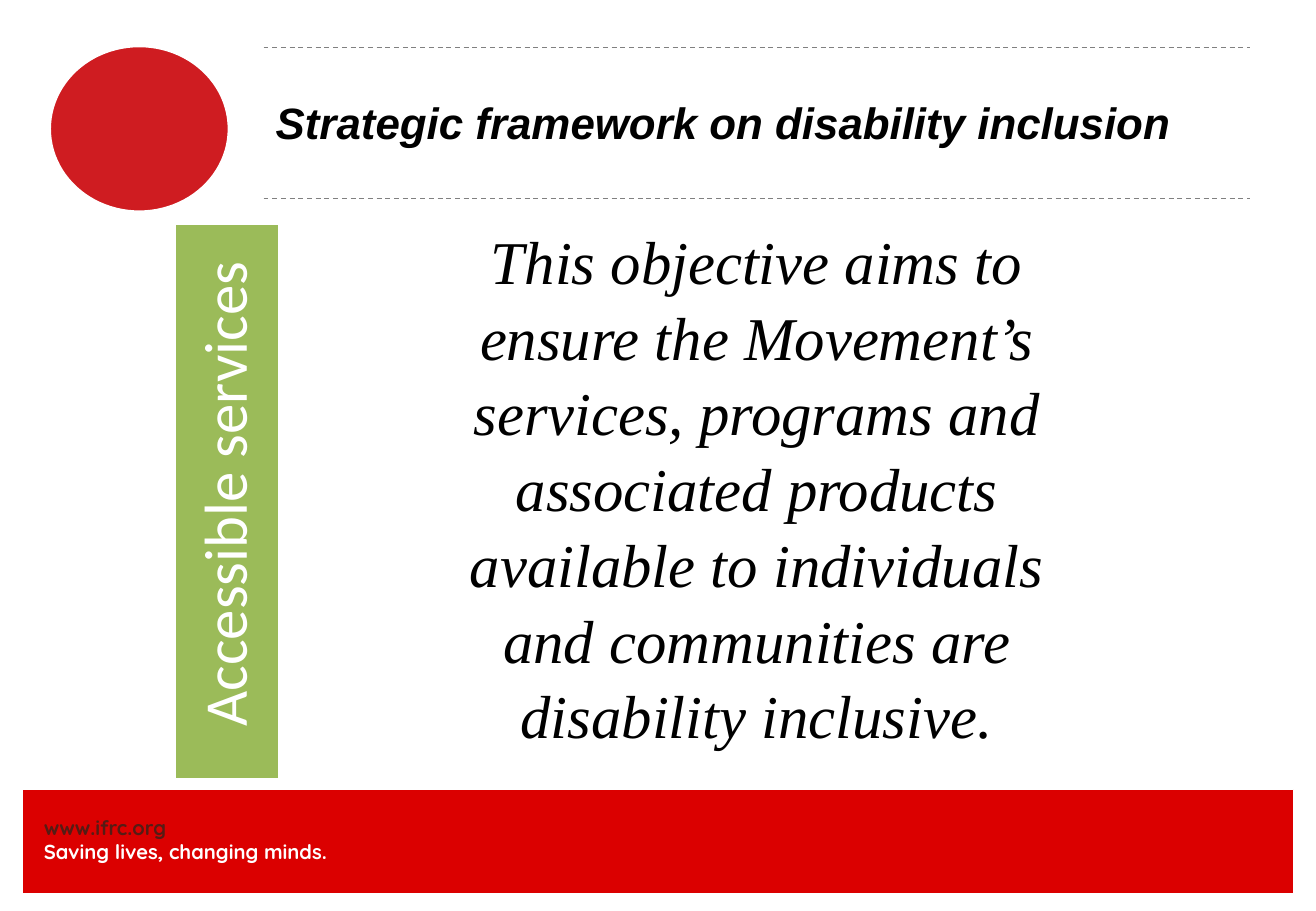
import pptx
import pptx.dml.color
import pptx.enum.dml
import pptx.enum.shapes
import pptx.enum.text
import pptx.oxml.ns
import pptx.util
from lxml import etree

Pt = pptx.util.Pt
Align = pptx.enum.text.PP_ALIGN
Anchor = pptx.enum.text.MSO_ANCHOR
Preset = pptx.enum.shapes.MSO_SHAPE

COLORS = {
    "white": "FFFFFF",
    "black": "000000",
    "footer": "DB0000",
    "address": "551C15",
    "disc": "CF1C21",
    "rule": "808080",
    "label": "9BBB59",
}


def rgb(name):
    return pptx.dml.color.RGBColor.from_string(COLORS[name])


def add_block(slide, preset, box, fill, border):
    block = slide.shapes.add_shape(preset, *map(Pt, box))
    block.shadow.inherit = False
    block.fill.solid()
    block.fill.fore_color.rgb = rgb(fill)
    block.line.color.rgb = rgb("white")
    block.line.width = Pt(border)
    return block


def add_rule(slide, left, right, y):
    rule = slide.shapes.add_connector(
        pptx.enum.shapes.MSO_CONNECTOR.STRAIGHT, Pt(left), Pt(y), Pt(right), Pt(y))
    rule.line.color.rgb = rgb("rule")
    rule.line.width = Pt(0.75)
    rule.line.dash_style = pptx.enum.dml.MSO_LINE.DASH
    etree.SubElement(rule._element.spPr, pptx.oxml.ns.qn("a:effectLst"))


def set_frame(frame, anchor, insets):
    frame.word_wrap = True
    frame.auto_size = pptx.enum.text.MSO_AUTO_SIZE.NONE
    frame.vertical_anchor = anchor
    frame.margin_left, frame.margin_top, frame.margin_right, frame.margin_bottom = map(Pt, insets)


def add_words(paragraph, words, font, size, color, align=Align.LEFT, bold=False, italic=False):
    paragraph.alignment = align
    run = paragraph.add_run()
    run.text = words
    run.font.name = font
    run.font.size = Pt(size)
    run.font.bold = bold
    run.font.italic = italic
    run.font.color.rgb = rgb(color)


def add_footer(slide):
    add_block(slide, Preset.RECTANGLE, (13.2, 468, 753.6, 61.9), "footer", 0.75)
    contact = slide.shapes.add_textbox(Pt(26), Pt(483.1), Pt(266.4), Pt(30)).text_frame
    set_frame(contact, Anchor.TOP, (0, 0, 0, 0))
    add_words(contact.paragraphs[0], "www.ifrc.org", "Quicksand", 12, "address", bold=True)
    add_words(contact.add_paragraph(), "Saving lives, changing minds.",
              "Quicksand", 12, "white", bold=True)


def set_title(slide):
    title = slide.shapes.title
    title.left, title.top, title.width, title.height = map(Pt, (156.2, 27.4, 584.6, 90))
    set_frame(title.text_frame, Anchor.MIDDLE, (7.2, 3.6, 7.2, 3.6))
    add_words(title.text_frame.paragraphs[0], "Strategic framework on disability inclusion",
              "Arial", 26, "black", bold=True, italic=True)


def add_label(slide):
    label = add_block(slide, Preset.RECTANGLE, (-30.2, 265.7, 329.8, 62.6), "label", 2)
    label.rotation = 270
    set_frame(label.text_frame, Anchor.MIDDLE, (10.3, 2.2, 2.2, 2.2))
    paragraph = label.text_frame.paragraphs[0]
    paragraph.line_spacing = 0.9
    add_words(paragraph, "Accessible services", "Calibri", 36, "white", Align.CENTER)


def add_objective(slide):
    objective = slide.shapes.add_textbox(Pt(253.4), Pt(131.8), Pt(390.2), Pt(312.5)).text_frame
    set_frame(objective, Anchor.MIDDLE, (7.2, 3.6, 7.2, 3.6))
    paragraph = objective.paragraphs[0]
    paragraph.line_spacing = 1.04
    add_words(paragraph,
              "This objective aims to ensure the Movement’s services, programs and "
              "associated products available to individuals and communities are "
              "disability inclusive.",
              "Times New Roman", 36, "black", Align.CENTER, italic=True)


def main():
    deck = pptx.Presentation()
    deck.slide_width, deck.slide_height = Pt(780), Pt(540)
    slide = deck.slides.add_slide(deck.slide_layouts[5])
    add_footer(slide)
    add_block(slide, Preset.OVAL, (29, 26.8, 107.2, 99.2), "disc", 2.5)
    for y in (28, 117.8):
        add_rule(slide, 156.2, 740.8, y)
    set_title(slide)
    add_label(slide)
    add_objective(slide)
    deck.save("out.pptx")


if __name__ == "__main__":
    main()
